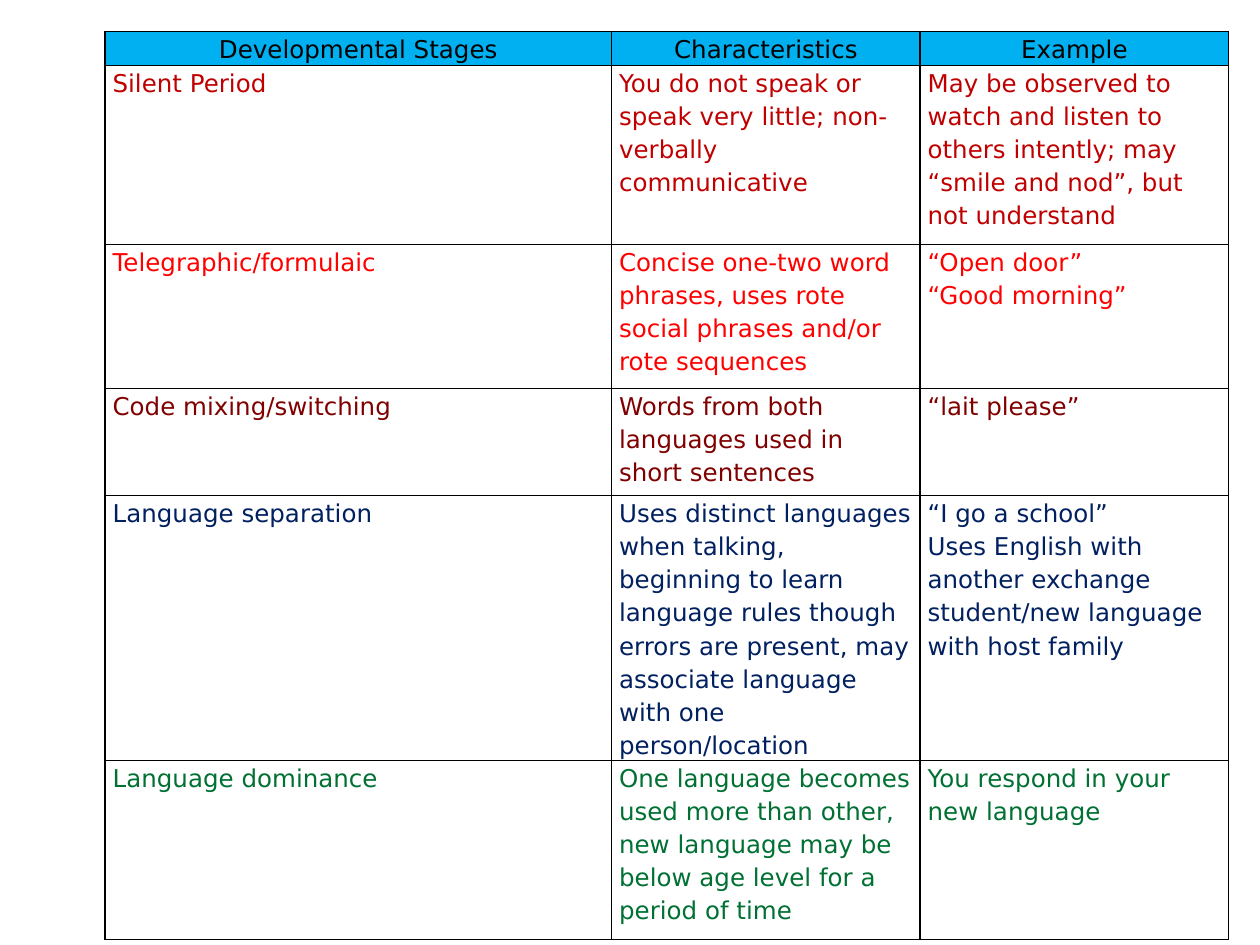
from lxml import etree
from pptx import Presentation
from pptx.dml.color import RGBColor
from pptx.enum.text import PP_ALIGN
from pptx.oxml.ns import qn
from pptx.util import Cm, Pt

CENTER = PP_ALIGN.CENTER
LEFT = PP_ALIGN.LEFT

FONT = "DejaVu Sans"
BLACK = "000000"
HEADER_FILL = "00B0F0"
COLUMN_WIDTHS = [10.21, 6.22, 6.22]
HEADER_HEIGHT = 0.69
HEADERS = ["Developmental Stages", "Characteristics", "Example"]
STAGES = [
    ("C00000", 3.61, "Silent Period",
     "You do not speak or speak very little; non-verbally communicative",
     "May be observed to watch and listen to others intently; "
     "may “smile and nod”, but not understand"),
    ("FF0000", 2.9, "Telegraphic/formulaic",
     "Concise one-two word phrases, uses rote social phrases and/or rote sequences",
     "“Open door”\n“Good morning”"),
    ("800000", 2.16, "Code mixing/switching",
     "Words from both languages used in short sentences",
     "“lait please”"),
    ("002060", 5.05, "Language separation",
     "Uses distinct languages when talking, beginning to learn language rules "
     "though errors are present, may associate language with one person/location",
     "“I go a school”\nUses English with another exchange student/new language "
     "with host family"),
    ("007033", 3.61, "Language dominance",
     "One language becomes used more than other, new language may be below "
     "age level for a period of time",
     "You respond in your new language"),
]


def rgb(color):
    return RGBColor.from_string(color)


def add_borders(cell):
    tc_pr = cell._tc.get_or_add_tcPr()
    for side in ("a:lnL", "a:lnR", "a:lnT", "a:lnB"):
        ln = etree.SubElement(tc_pr, qn(side), w=str(Pt(1)))
        fill = etree.SubElement(ln, qn("a:solidFill"))
        etree.SubElement(fill, qn("a:srgbClr"), val=BLACK)


def write_text(tf, text, color, align):
    for i, line in enumerate(text.split("\n")):
        p = tf.add_paragraph() if i else tf.paragraphs[0]
        p.alignment = align
        p.line_spacing = 1.15
        r = p.add_run()
        r.text = line
        r.font.name = FONT
        r.font.size = Pt(14)
        r.font.bold = False
        r.font.color.rgb = rgb(color)


def fill_row(table, index, height, texts, color, align=LEFT, fill=None):
    table.rows[index].height = Cm(height)
    for cell, text in zip(table.rows[index].cells, texts):
        cell.margin_left = cell.margin_right = Cm(0.15)
        cell.margin_top = cell.margin_bottom = 0
        add_borders(cell)
        if fill:
            cell.fill.solid()
            cell.fill.fore_color.rgb = rgb(fill)
        else:
            cell.fill.background()
        write_text(cell.text_frame, text, color, align)


def add_stage_table(s):
    height = HEADER_HEIGHT + sum(stage[1] for stage in STAGES)
    table = s.shapes.add_table(
        len(STAGES) + 1, len(HEADERS), Cm(2.12), Cm(0.63),
        Cm(sum(COLUMN_WIDTHS)), Cm(height)).table
    for column, width in zip(table.columns, COLUMN_WIDTHS):
        column.width = Cm(width)
    fill_row(table, 0, HEADER_HEIGHT, HEADERS, BLACK, CENTER, HEADER_FILL)
    for i, (color, row_height, *texts) in enumerate(STAGES, 1):
        fill_row(table, i, row_height, texts, color)


def main():
    prs = Presentation()
    prs.slide_width = Cm(25.4)
    prs.slide_height = Cm(19.05)
    s = prs.slides.add_slide(prs.slide_layouts[6])
    add_stage_table(s)
    prs.save("out.pptx")


if __name__ == "__main__":
    main()
